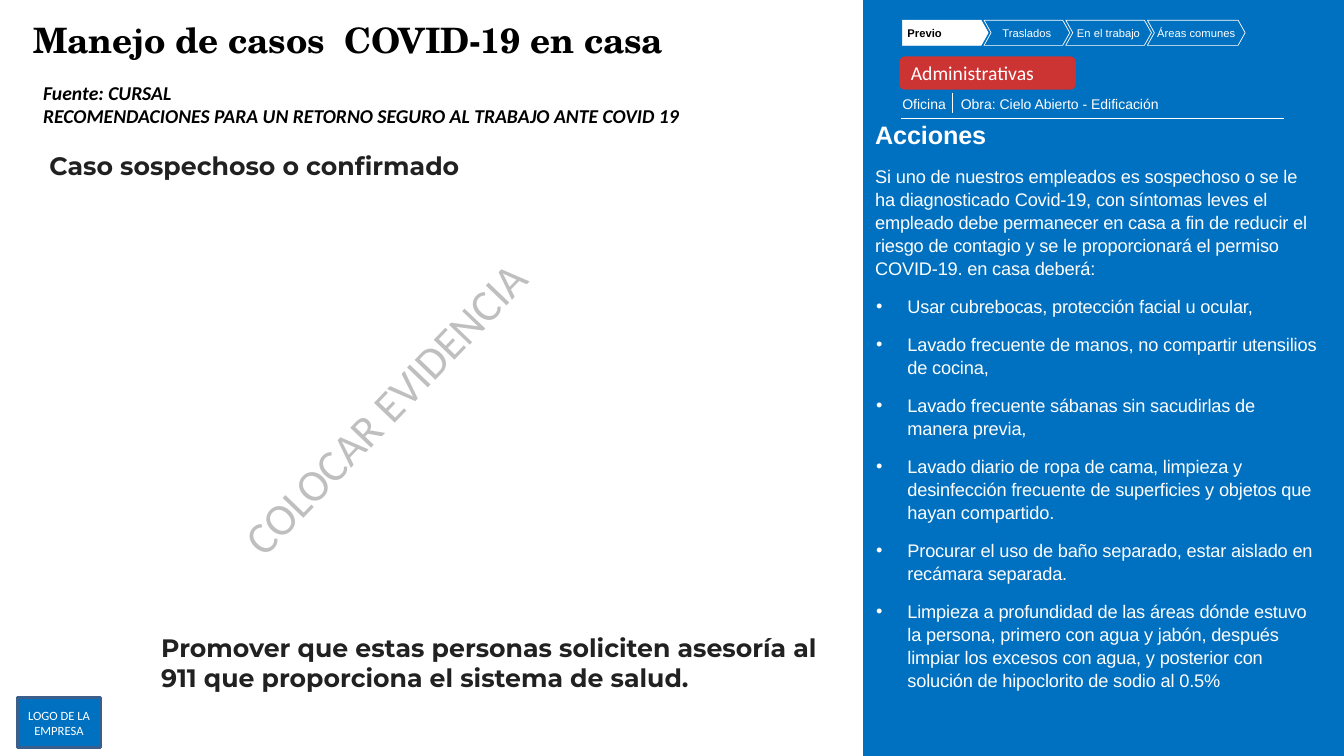
from lxml import etree
from pptx import Presentation
from pptx.dml.color import RGBColor
from pptx.enum.shapes import MSO_CONNECTOR, MSO_SHAPE
from pptx.enum.text import MSO_ANCHOR, MSO_AUTO_SIZE, PP_ALIGN
from pptx.oxml.ns import qn
from pptx.util import Inches, Pt

BLUE = RGBColor(0x00, 0x70, 0xC0)
NAVY = RGBColor(0x3A, 0x5F, 0x8C)
RED = RGBColor(0xCC, 0x33, 0x33)
WHITE = RGBColor(0xFF, 0xFF, 0xFF)
BLACK = RGBColor(0, 0, 0)
DARK = RGBColor(0x21, 0x21, 0x21)
GRAY = RGBColor(0xBF, 0xBF, 0xBF)

STEPS = ["Previo", "Traslados", "En el trabajo", "Áreas comunes"]
INTRO = ("Si uno de nuestros empleados es sospechoso o se le ha diagnosticado "
         "Covid-19, con síntomas leves el empleado debe permanecer en casa a fin "
         "de reducir el riesgo de contagio y se le proporcionará el permiso "
         "COVID-19. en casa deberá:")
ACTIONS = [
    "Usar cubrebocas, protección facial u ocular,",
    "Lavado frecuente de manos, no compartir utensilios de cocina,",
    "Lavado frecuente sábanas sin sacudirlas de manera previa,",
    "Lavado diario de ropa de cama, limpieza y desinfección frecuente de "
    "superficies y objetos que hayan compartido.",
    "Procurar el uso de baño separado, estar aislado en recámara separada.",
    "Limpieza a profundidad de las áreas dónde estuvo la persona, primero con "
    "agua y jabón, después limpiar los excesos con agua, y posterior con "
    "solución de hipoclorito de sodio al 0.5%",
]


def style(p, font, size, color, bold=False, italic=False, spacing=0):
    """Format every run of a paragraph; spacing is in points."""
    for r in p.runs:
        r.font.name, r.font.size = font, Pt(size)
        r.font.bold, r.font.italic = bold, italic
        r.font.color.rgb = color
        if spacing:
            r._r.get_or_add_rPr().set("spc", str(round(spacing * 100)))


def set_insets(tf, left=0, top=0, right=0, bottom=0):
    tf.margin_left, tf.margin_top = Inches(left), Inches(top)
    tf.margin_right, tf.margin_bottom = Inches(right), Inches(bottom)


def move(sp, x, y, w, h):
    sp.left, sp.top, sp.width, sp.height = map(Inches, (x, y, w, h))


def add_text(slide, box, text, *font, align=PP_ALIGN.LEFT, **look):
    sp = slide.shapes.add_textbox(*map(Inches, box))
    tf = sp.text_frame
    tf.word_wrap = True
    tf.text = text
    for p in tf.paragraphs:
        p.alignment = align
        style(p, *font, **look)
    return sp


def add_box(slide, kind, box, fill=None, line=None, width=0.5):
    sp = slide.shapes.add_shape(kind, *map(Inches, box))
    sp.shadow.inherit = False
    if fill is None:
        sp.fill.background()
    else:
        sp.fill.solid()
        sp.fill.fore_color.rgb = fill
    if line is None:
        sp.line.fill.background()
    else:
        sp.line.color.rgb = line
        sp.line.width = Pt(width)
    return sp


def add_rule(slide, x1, y1, x2, y2):
    line = slide.shapes.add_connector(
        MSO_CONNECTOR.STRAIGHT, *map(Inches, (x1, y1, x2, y2)))
    line.line.color.rgb = WHITE
    line.line.width = Pt(0.5)
    etree.SubElement(line._element.spPr, qn("a:effectLst"))


def set_bullet(p, char=None, left=0.01, indent=0):
    pPr = p._p.get_or_add_pPr()
    pPr.set("marL", str(Inches(left)))
    pPr.set("indent", str(Inches(indent)))
    if char:
        etree.SubElement(pPr, qn("a:buChar")).set("char", char)
    else:
        etree.SubElement(pPr, qn("a:buNone"))


def fill_title(title, x, y, w, h):
    move(title, x, y, w, h)
    tf = title.text_frame
    tf.text = "Manejo de casos  COVID-19 en casa"
    tf.auto_size = MSO_AUTO_SIZE.NONE
    tf.vertical_anchor = MSO_ANCHOR.TOP
    set_insets(tf, top=0.01)
    p = tf.paragraphs[0]
    p.alignment = PP_ALIGN.LEFT
    style(p, "TeX Gyre Schola", 25, BLACK, bold=True, spacing=-0.1)


def fill_actions(body, x, y, w, h):
    move(body, x, y, w, h)
    tf = body.text_frame
    tf.text = "\n".join(["Acciones", INTRO, *ACTIONS])
    tf.auto_size = MSO_AUTO_SIZE.NONE
    set_insets(tf, top=0.01, right=0.1)
    heading, intro, *actions = tf.paragraphs
    for p in tf.paragraphs:
        p.space_before = Pt(10.8)
        p.line_spacing = 1.05
        style(p, "Arial", 13, WHITE, spacing=-0.1)
    heading.space_before = Pt(1)
    heading.line_spacing = 1.0
    style(heading, "Arial", 18, WHITE, bold=True, spacing=-0.1)
    for p in (heading, intro):
        set_bullet(p)
    for p in actions:
        set_bullet(p, "•", 0.33, -0.31)


def add_steps(slide, x, y, pitch, h):
    """Row of arrows; the first step is the active one."""
    for i, name in enumerate(STEPS):
        active = i == 0
        w = 0.97 if name == STEPS[-1] else 0.85
        kind = MSO_SHAPE.PENTAGON if active else MSO_SHAPE.CHEVRON
        sp = add_box(slide, kind, (x + i * pitch, y, w, h),
                     WHITE if active else None, WHITE)
        sp.adjustments[0] = 0.28
        tf = sp.text_frame
        tf.text = name
        tf.word_wrap = False
        set_insets(tf, left=0.05 if active else 0)
        p = tf.paragraphs[0]
        p.alignment = PP_ALIGN.LEFT if active else PP_ALIGN.CENTER
        style(p, "Arial", 8, BLACK if active else WHITE, bold=active)


def add_panel_header(slide, x, y):
    add_steps(slide, x, y, 0.81, 0.25)
    badge = add_box(slide, MSO_SHAPE.ROUNDED_RECTANGLE,
                    (x - 0.03, y + 0.36, 1.75, 0.33), RED)
    badge.text_frame.text = "Administrativas"
    p = badge.text_frame.paragraphs[0]
    p.alignment = PP_ALIGN.LEFT
    style(p, "Calibri", 14, WHITE)
    for dx, w, text in [(0, 0.48, "Oficina"),
                        (0.58, 3, "Obra: Cielo Abierto - Edificación")]:
        sp = add_text(slide, (x + dx, y + 0.75, w, 0.17), text, "Arial", 10, WHITE)
        set_insets(sp.text_frame)
    add_rule(slide, x + 0.5, y + 0.72, x + 0.5, y + 0.92)
    add_rule(slide, x - 0.01, y + 0.97, x + 3.78, y + 0.97)


def add_logo_box(slide, *box):
    sp = add_box(slide, MSO_SHAPE.RECTANGLE, box, BLUE, NAVY, 2)
    sp.text_frame.text = "LOGO DE LA EMPRESA"
    p = sp.text_frame.paragraphs[0]
    p.alignment = PP_ALIGN.CENTER
    style(p, "Calibri", 9, WHITE)


def add_evidence_area(slide, x, y):
    add_text(slide, (x, y, 7.57, 0.57),
             "Fuente: CURSAL\n"
             "RECOMENDACIONES PARA UN RETORNO SEGURO AL TRABAJO ANTE COVID 19",
             "Calibri", 14, BLACK, bold=True, italic=True)
    add_text(slide, (x + 0.06, y + 0.69, 8.11, 0.71),
             "Caso sospechoso o confirmado", "Montserrat", 18, DARK, bold=True)
    add_text(slide, (x + 1.17, y + 5.47, 7, 0.71),
             "Promover que estas personas soliciten asesoría al 911 que "
             "proporciona el sistema de salud.", "Montserrat", 18, DARK, bold=True)
    prompt = add_text(slide, (x + 1.07, y + 2.98, 4.83, 0.64), "COLOCAR EVIDENCIA",
                      "Calibri", 32, GRAY, align=PP_ALIGN.CENTER)
    prompt.rotation = 313.8


def main():
    prs = Presentation()
    prs.slide_width, prs.slide_height = Inches(13.33), Inches(7.5)
    slide = prs.slides.add_slide(prs.slide_layouts[1])
    panel = add_box(slide, MSO_SHAPE.RECTANGLE, (8.56, 0, 4.77, 7.5), BLUE)
    slide.shapes._spTree.insert(2, panel._element)  # behind the placeholders
    fill_title(slide.shapes.title, 0.33, 0.17, 7.58, 0.85)
    fill_actions(slide.placeholders[1], 8.67, 1.17, 4.5, 5.77)
    add_panel_header(slide, 8.95, 0.2)
    add_evidence_area(slide, 0.33, 0.75)
    add_logo_box(slide, 0.17, 6.92, 0.83, 0.5)
    prs.save("out.pptx")


if __name__ == "__main__":
    main()
